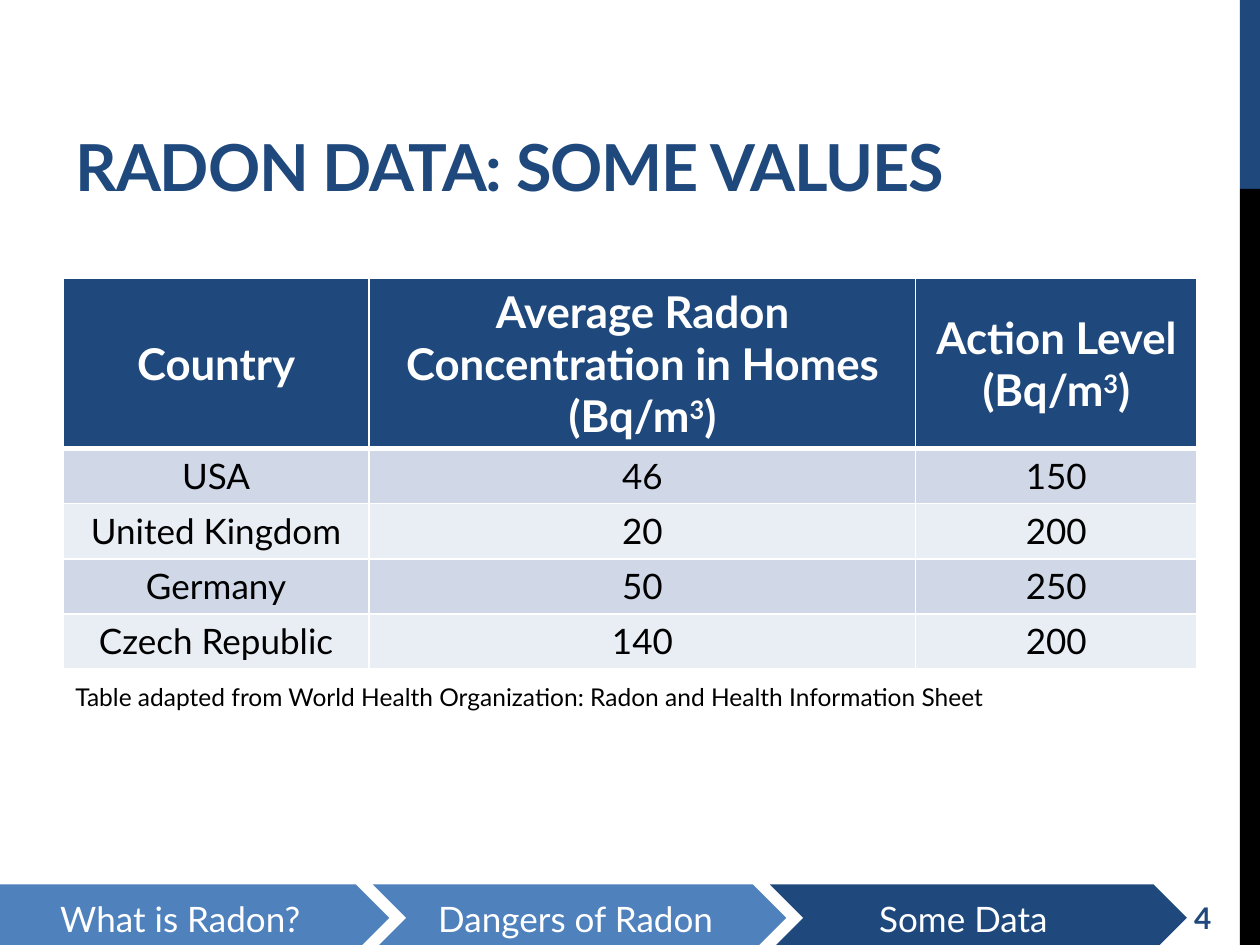
from pptx import Presentation
from pptx import util as u
from pptx.dml.color import RGBColor
from pptx.enum import shapes, text
from pptx.oxml import parse_xml
from pptx.oxml.ns import nsdecls

HUES = {"navy": "1F497D", "blue": "4F81BD", "black": "000000",
        "white": "FFFFFF", "odd": "D0D8E8", "even": "E9EDF4"}
WIDE, HIGH = 10, 7.5
FACE = "Lato"
HEADS = [("Country",),
         ("Average Radon Concentration in Homes (Bq/m", "3", ")"),
         ("Action Level (Bq/m", "3", ")")]
ROWS = [("USA", "46", "150"), ("United Kingdom", "20", "200"),
        ("Germany", "50", "250"), ("Czech Republic", "140", "200")]
STEPS = [("What is Radon?", -0.22, 3.31, 0.6, 2.23),
         ("Dangers of Radon", 2.96, 3.28, 0.42, 2.6),
         ("Some Data", 6.11, 3.31, 0.77, 1.67)]


def hue(name):
    """Return the named colour."""
    return RGBColor.from_string(HUES[name])


def span(box):
    """Turn a box in inches into lengths."""
    return [u.Inches(n) for n in box]


def style(para, size, tint, bold=False, align=None):
    """Set the font and alignment of a paragraph."""
    font = para.font
    font.name, font.size, font.bold = FACE, u.Pt(size), bold
    font.color.rgb = hue(tint)
    para.alignment = align


def block(group, kind, box, tint):
    """Draw a plain filled shape."""
    shape = group.add_shape(kind, *span(box))
    shape.shadow.inherit = False
    shape.fill.solid()
    shape.fill.fore_color.rgb = hue(tint)
    shape.line.fill.background()


def label(group, box, words, size, tint, bold=False, wrap=True,
          anchor=text.MSO_ANCHOR.MIDDLE):
    """Place a text box and return its paragraph."""
    frame = group.add_textbox(*span(box)).text_frame
    frame.word_wrap, frame.vertical_anchor = wrap, anchor
    para = frame.paragraphs[0]
    para.text = words
    style(para, size, tint, bold)
    return para


def side(shapes_, box):
    """Draw the two-part bar, one fifth navy."""
    x, y, w, h = box
    kind = shapes.MSO_SHAPE.RECTANGLE
    block(shapes_, kind, (x, y, w, h / 5), "navy")
    block(shapes_, kind, (x, y + h / 5, w, h * 4 / 5), "black")


def title(shape, box, words):
    """Place and format the title."""
    shape.left, shape.top, shape.width, shape.height = span(box)
    frame = shape.text_frame
    frame.auto_size = text.MSO_AUTO_SIZE.NONE
    frame.vertical_anchor = text.MSO_ANCHOR.BOTTOM
    para = frame.paragraphs[0]
    run = para.add_run()
    run.text = words
    style(para, 37, "navy", True, text.PP_ALIGN.LEFT)
    run.font._element.set("spc", "-60")


def edge(cell, base):
    """Give a cell white borders with the stated bottom width."""
    prop = cell._tc.get_or_add_tcPr()
    for tag, wide in (("lnL", 1), ("lnR", 1), ("lnT", 1), ("lnB", base)):
        prop.append(parse_xml(
            f'<a:{tag} {nsdecls("a")} w="{u.Pt(wide)}"><a:solidFill>'
            f'<a:srgbClr val="{HUES["white"]}"/></a:solidFill></a:{tag}>'))


def fill(cell, parts, row):
    """Write a cell, raising every second part."""
    head = row == 0
    edge(cell, 3 if head else 1)
    cell.fill.solid()
    cell.fill.fore_color.rgb = hue("navy" if head else "odd" if row % 2 else "even")
    if head:
        cell.vertical_anchor = text.MSO_ANCHOR.MIDDLE
    para = cell.text_frame.paragraphs[0]
    for k, part in enumerate(parts):
        run = para.add_run()
        run.text = part
        if k % 2:
            run.font._element.set("baseline", "30000")
    style(para, 25 if head else 20, "white" if head else "black", head,
          text.PP_ALIGN.CENTER)


def grid(shapes_, box):
    """Build the table of radon levels."""
    data = [HEADS] + [[(word,) for word in row] for row in ROWS]
    table = shapes_.add_table(len(data), len(HEADS), *span(box)).table
    for col, part in zip(table.columns, (0.27, 0.482, 0.248)):
        col.width = u.Inches(box[2] * part)
    head = 1.33
    for r, cells in enumerate(data):
        high = (box[3] - head) / len(ROWS) if r else head
        table.rows[r].height = u.Inches(high)
        for c, parts in enumerate(cells):
            fill(table.cell(r, c), parts, r)


def trail(shapes_, y, h):
    """Draw the row of steps with the last one current."""
    group = shapes_.add_group_shape().shapes
    last = len(STEPS) - 1
    for k, (_, x, w, _, _) in enumerate(STEPS):
        kind = shapes.MSO_SHAPE.CHEVRON if k else shapes.MSO_SHAPE.PENTAGON
        block(group, kind, (x, y, w, h), "navy" if k == last else "blue")
    for words, x, _, inset, wide in STEPS:
        label(group, (x + inset, y + 0.05, wide, 0.44), words, 20, "white", wrap=False)


def main():
    """Build and save the slide."""
    deck = Presentation()
    deck.slide_width, deck.slide_height = span((WIDE, HIGH))
    slide = deck.slides.add_slide(deck.slide_layouts[5])
    tree = slide.shapes
    left, wide = WIDE * 0.05, WIDE * 0.9
    side(tree, (9.84, 0, 0.16, HIGH))
    title(tree.title, (left, 0.17, wide, 1.5), "RADON DATA: SOME VALUES")
    label(tree, (9.38, 7.08, 1.44, 0.4), "4", 17, "navy", True)
    grid(tree, (left, 2.21, wide, 3.08))
    note = label(tree, (left, 5.39, 8.77, 0.32),
                 "Table adapted from World Health Organization: "
                 "Radon and Health Information Sheet",
                 14, "black", anchor=text.MSO_ANCHOR.TOP)
    note.alignment, note.line_spacing = text.PP_ALIGN.JUSTIFY, 0.9
    trail(tree, 7.02, 0.53)
    deck.save("out.pptx")


if __name__ == "__main__":
    main()
